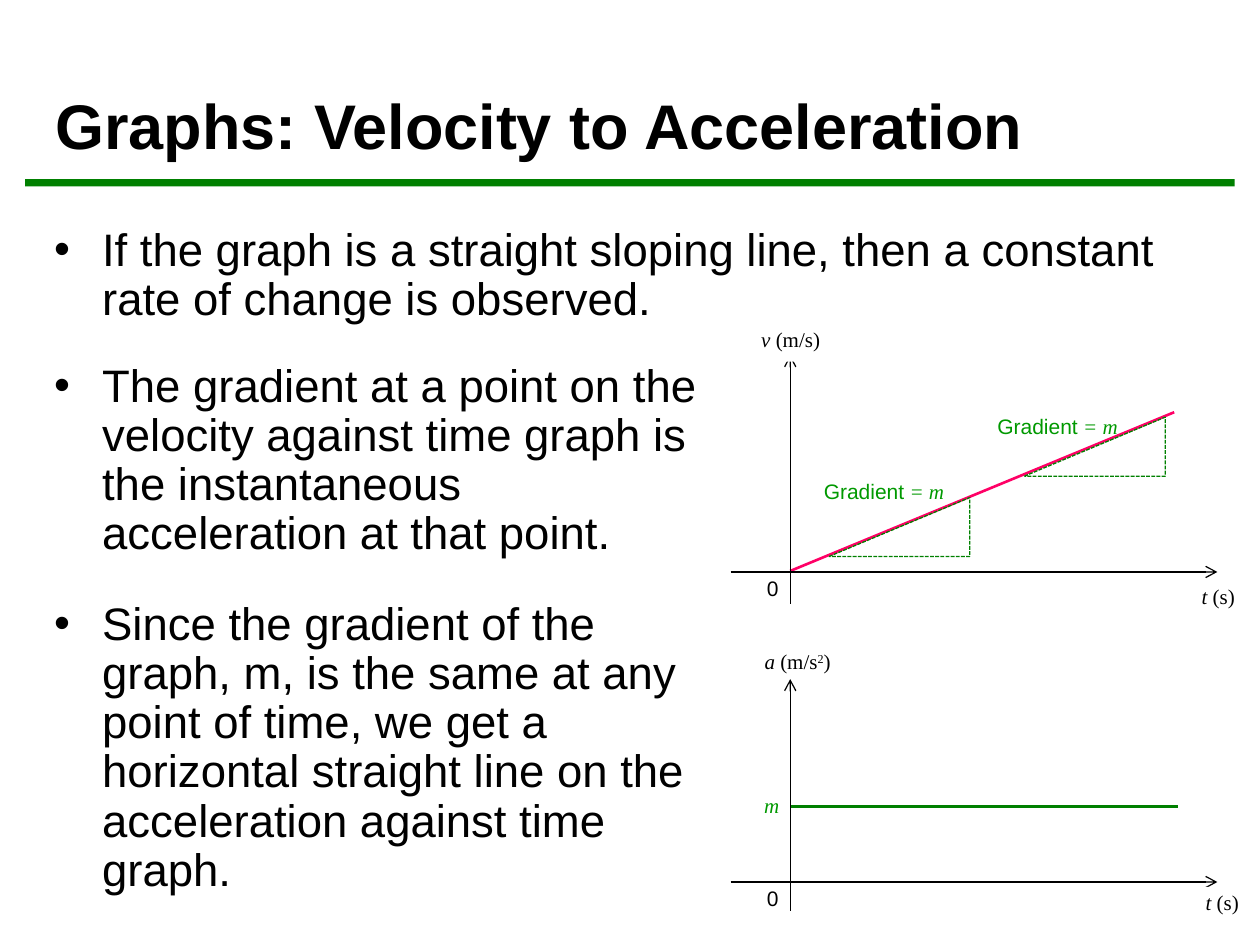
from lxml import etree
from pptx import Presentation
from pptx import util as u
from pptx.dml.color import RGBColor
from pptx.enum import dml, shapes, text
from pptx.oxml.ns import qn

Cm, Pt = u.Cm, u.Pt
BLACK = RGBColor(0, 0, 0)
WHITE = RGBColor(255, 255, 255)
GREEN = RGBColor(0, 0x80, 0)
LEAF = RGBColor(0, 0x99, 0)
PINK = RGBColor(0xFF, 0, 0x66)
SANS, SERIF = "Arial", "Times New Roman"

prs = Presentation()
prs.slide_width, prs.slide_height = Cm(25.4), Cm(19.05)
slide = prs.slides.add_slide(prs.slide_layouts[5])
items = slide.shapes


def line(x1, y1, x2, y2, color, width, tip=None):
    """Draw a straight line; tip is headEnd, tailEnd or None."""
    rule = items.add_connector(shapes.MSO_CONNECTOR.STRAIGHT,
                               Cm(x1), Cm(y1), Cm(x2), Cm(y2))
    rule.line.color.rgb = color
    rule.line.width = Pt(width)
    if tip:
        etree.SubElement(rule.line._get_or_add_ln(), qn("a:" + tip), type="arrow")
    etree.SubElement(rule._element.spPr, qn("a:effectLst"))


def label(x, y, w, h, runs, color=BLACK, plate=False):
    """Centred 12 pt label; runs are (text, font, italic), plate is a white back."""
    if plate:
        box = items.add_shape(shapes.MSO_SHAPE.RECTANGLE, Cm(x), Cm(y), Cm(w), Cm(h))
        box.shadow.inherit = False
        box.fill.solid()
        box.fill.fore_color.rgb = WHITE
        box.line.fill.background()
    else:
        box = items.add_textbox(Cm(x), Cm(y), Cm(w), Cm(h))
    frame = box.text_frame
    frame.word_wrap = True
    frame.vertical_anchor = text.MSO_ANCHOR.TOP
    if plate:
        frame.margin_left = frame.margin_right = Cm(0.2)
        frame.margin_top = frame.margin_bottom = Cm(0.1)
    para = frame.paragraphs[0]
    para.alignment = text.PP_ALIGN.CENTER
    para.line_spacing = 0.9
    para.font.size = Pt(12)
    para.font.color.rgb = color
    for words, face, slant in runs:
        run = para.add_run()
        run.text = words
        run.font.name = face
        run.font.italic = slant
        run.font.size = Pt(12)
        run.font.color.rgb = color
    return para


# Green bar under the title
bar = items.add_shape(shapes.MSO_SHAPE.RECTANGLE, Cm(0.51), Cm(3.61), Cm(24.38), Cm(0.15))
bar.shadow.inherit = False
bar.fill.solid()
bar.fill.fore_color.rgb = GREEN
bar.line.fill.background()

# Title
title = items.title
title.left, title.top, title.width, title.height = Cm(0.86), Cm(0.43), Cm(23.8), Cm(2.97)
title.text_frame.text = "Graphs: Velocity to Acceleration"
title.text_frame.vertical_anchor = text.MSO_ANCHOR.BOTTOM
head = title.text_frame.paragraphs[0]
head.alignment = text.PP_ALIGN.LEFT
head.font.name, head.font.size, head.font.bold = SANS, Pt(36), True
head.font.color.rgb = BLACK

# Bullet text
bodies = [
    (4.45, 23.7, 13.97, [
        "If the graph is a straight sloping line, then a constant rate of change "
        "is observed."]),
    (7.19, 13.77, 9.96, [
        "The gradient at a point on the velocity against time graph is the "
        "instantaneous acceleration at that point.",
        "Since the gradient of the graph, m, is the same at any point of time, we "
        "get a horizontal straight line on the acceleration against time graph."]),
]
for y, w, h, points in bodies:
    frame = items.add_textbox(Cm(0.84), Cm(y), Cm(w), Cm(h)).text_frame
    frame.word_wrap = True
    for i, point in enumerate(points):
        para = frame.add_paragraph() if i else frame.paragraphs[0]
        para.text = point
        para.line_spacing = 0.9
        if i:
            para.space_before = Pt(24)
        props = para._p.get_or_add_pPr()
        props.set("marL", str(Cm(0.97)))
        props.set("indent", str(-Cm(0.97)))
        etree.SubElement(props, qn("a:buFont"), typeface=SANS)
        etree.SubElement(props, qn("a:buChar"), char="•")
        para.font.name, para.font.size = SANS, Pt(26)
        para.font.color.rgb = BLACK

# Sloping and flat graph lines
zero = 15.93
line(zero, 11.51, 23.67, 8.31, PINK, 1.5)
line(zero, 16.26, 23.75, 16.26, GREEN, 1.5)

# Gradient triangles with their labels
for x, y, tx, ty in [(20.65, 8.41, 19.2, 8.26), (16.71, 10.03, 15.7, 9.58)]:
    tri = items.add_shape(shapes.MSO_SHAPE.ISOSCELES_TRIANGLE,
                          Cm(x), Cm(y), Cm(2.84), Cm(1.19))
    tri.adjustments[0] = 1
    tri.shadow.inherit = False
    tri.fill.background()
    tri.line.color.rgb = GREEN
    tri.line.width = Pt(0.75)
    tri.line.dash_style = dml.MSO_LINE.SQUARE_DOT
    label(tx, ty, 4.24, 0.71, [("Gradient", SANS, False), (" = m", SERIF, True)], LEAF)

# Axes, origins and time labels
for top, base, foot, tx, ty in [(7.16, 11.53, 12.17, 23.39, 11.73),
                                (13.69, 17.78, 18.36, 23.47, 17.88)]:
    line(zero, top, zero, foot, BLACK, 0.75, "headEnd")
    line(14.73, base, 24.54, base, BLACK, 0.75, "tailEnd")
    label(15.21, base, 0.71, 0.71, [("0", SANS, False)])
    label(tx, ty, 2.34, 0.52, [("t ", SERIF, True), ("(s)", SERIF, False)], plate=True)

# Labels of the upright axes
label(14.96, 6.55, 1.96, 0.74, [("v ", SERIF, True), ("(m/s)", SERIF, False)], plate=True)
unit = label(14.71, 13.03, 2.74, 0.53,
             [("a", SERIF, True), (" (m/s", SERIF, False),
              ("2", SERIF, False), (")", SERIF, False)], plate=True)
unit.runs[2].font._element.set("baseline", "30000")
label(14.71, 15.9, 1.7, 0.71, [("m", SERIF, True)], LEAF)

prs.save("out.pptx")
